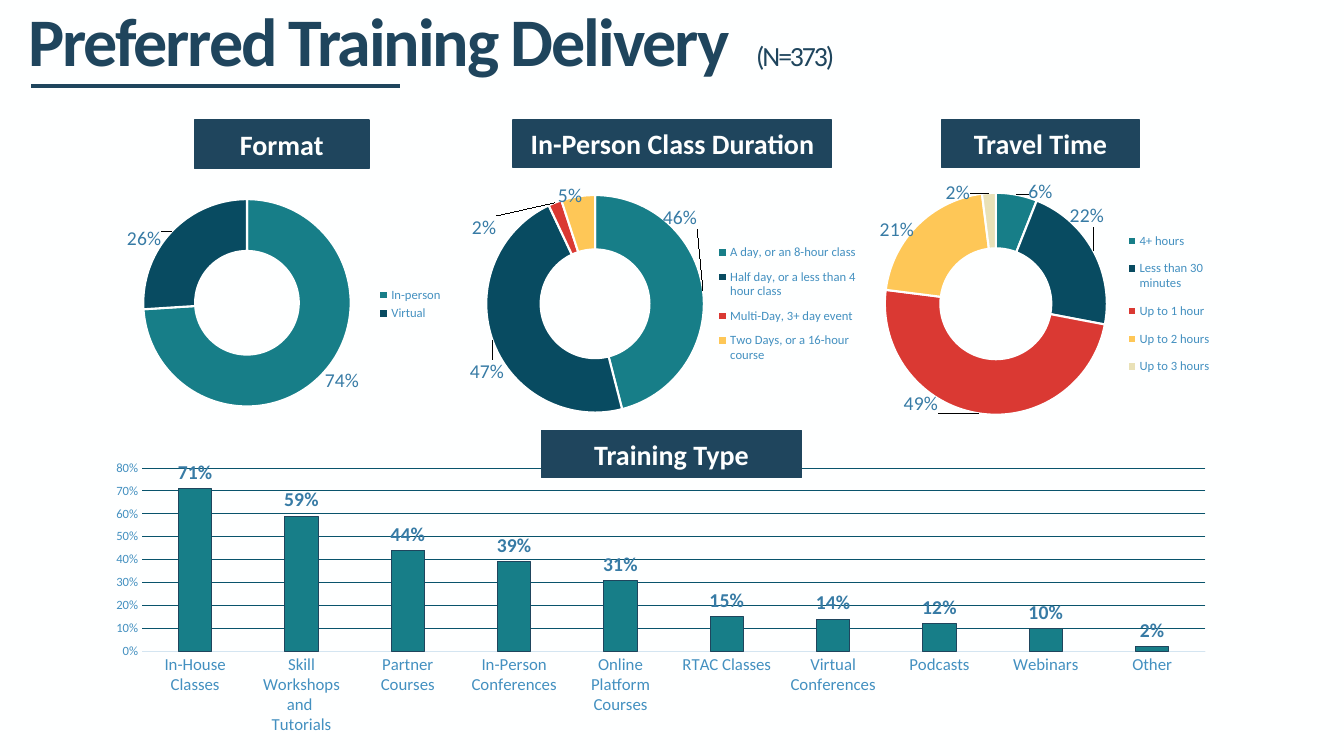
from dataclasses import dataclass

from lxml.etree import SubElement
from pptx import Presentation
from pptx.chart.data import CategoryChartData
from pptx.dml.color import RGBColor
from pptx.enum.chart import XL_CHART_TYPE, XL_LABEL_POSITION, XL_LEGEND_POSITION, XL_TICK_MARK
from pptx.enum.shapes import MSO_CONNECTOR, MSO_SHAPE
from pptx.enum.text import MSO_ANCHOR, PP_ALIGN
from pptx.oxml import parse_xml
from pptx.oxml.ns import nsdecls, qn
from pptx.util import Pt

EMU_PER_PX = 9144


@dataclass(frozen=True)
class Theme:
    font: str = "Calibri"
    navy: str = "1F455D"
    white: str = "FEFFFF"
    label: str = "377BA5"
    axis: str = "4390C0"
    grid: str = "09546C"
    baseline: str = "D4E5F1"
    slices: tuple = ("177E88", "084B61", "DA3933", "FEC757", "E9E1B7")
    title_size: float = 48.6
    sample_size: float = 19.8
    banner_size: int = 20
    value_size: int = 14
    category_size: int = 12
    chart_size: int = 10
    small_size: int = 9


THEME = Theme()


def px(*lengths):
    return [length * EMU_PER_PX for length in lengths]


def rgb(code):
    return RGBColor.from_string(code)


def style_font(font, size, color, bold=False):
    font.name = THEME.font
    font.size = Pt(size)
    font.color.rgb = rgb(color)
    font.bold = bold


def style_line(line, color, width):
    line.color.rgb = rgb(color)
    line.width = Pt(width)


def style_fill(fill, color):
    fill.solid()
    fill.fore_color.rgb = rgb(color)


def set_layout(element, index, values, inner=False):
    for old in element.findall(qn("c:layout")):
        element.remove(old)
    layout = parse_xml(f"<c:layout {nsdecls('c')}><c:manualLayout/></c:layout>")
    settings = []
    if inner:
        settings.append(("layoutTarget", "inner"))
    if len(values) == 4:
        settings += [("xMode", "edge"), ("yMode", "edge")]
    settings += zip("xywh", values)
    for tag, value in settings:
        SubElement(layout[0], qn(f"c:{tag}")).set("val", str(value))
    element.insert(index, layout)


def add_title(slide, heading, sample):
    title = slide.shapes.title
    title.left, title.top, title.width, title.height = px(18, 3, 1304, 82)
    title.text_frame.vertical_anchor = MSO_ANCHOR.MIDDLE
    paragraph = title.text_frame.paragraphs[0]
    paragraph.alignment = PP_ALIGN.LEFT
    paragraph.line_spacing = 0.9
    tabs = SubElement(paragraph._p.get_or_add_pPr(), qn("a:tabLst"))
    tab = SubElement(tabs, qn("a:tab"))
    tab.set("pos", str(px(722)[0]))
    tab.set("algn", "l")
    parts = ((heading + "\t", THEME.title_size, True), (sample, THEME.sample_size, False))
    for text, size, bold in parts:
        run = paragraph.add_run()
        run.text = text
        style_font(run.font, size, THEME.navy, bold)
        run._r.get_or_add_rPr().set("spc", "-150")


def add_rule(slide, left, right, y):
    rule = slide.shapes.add_connector(MSO_CONNECTOR.STRAIGHT, *px(left, y, right, y))
    style_line(rule.line, THEME.navy, 3)
    SubElement(rule._element.spPr, qn("a:effectLst"))


def add_banner(slide, text, box):
    banner = slide.shapes.add_shape(MSO_SHAPE.RECTANGLE, *px(*box))
    banner.shadow.inherit = False
    style_fill(banner.fill, THEME.navy)
    style_line(banner.line, THEME.navy, 1)
    frame = banner.text_frame
    frame.word_wrap = True
    frame.vertical_anchor = MSO_ANCHOR.MIDDLE
    paragraph = frame.paragraphs[0]
    paragraph.text = text
    paragraph.alignment = PP_ALIGN.CENTER
    style_font(paragraph.font, THEME.banner_size, THEME.white, True)


def add_chart(slide, kind, box, shares, plot_area):
    data = CategoryChartData(number_format="0%")
    data.categories = list(shares)
    data.add_series("Series 1", list(shares.values()))
    chart = slide.shapes.add_chart(kind, *px(*box), data).chart
    chart.has_title = False
    style_font(chart.font, THEME.chart_size, THEME.navy)
    set_layout(chart._chartSpace.chart.plotArea, 0, plot_area, inner=True)
    return chart


def style_labels(labels, bold=False):
    labels.show_value = True
    labels.number_format = "0%"
    labels.number_format_is_linked = False
    style_font(labels.font, THEME.value_size, THEME.label, bold)


def add_doughnut(slide, box, shares, plot_area, legend_area, label_shifts):
    chart = add_chart(slide, XL_CHART_TYPE.DOUGHNUT, box, shares, plot_area)
    chart.has_legend = True
    legend = chart.legend
    legend.position = XL_LEGEND_POSITION.RIGHT
    legend.include_in_layout = False
    style_font(legend.font, THEME.small_size, THEME.axis)
    set_layout(legend._element, 1, legend_area)
    plot = chart.plots[0]
    plot.vary_by_categories = True
    plot._element.find(qn("c:holeSize")).set("val", "75")
    series = plot.series[0]
    style_labels(series.data_labels)
    for index, color in enumerate(THEME.slices[:len(shares)]):
        point = series.points[index]
        style_fill(point.format.fill, color)
        style_line(point.format.line, THEME.white, 1.5)
        style_font(point.data_label.font, THEME.value_size, THEME.label)
    for label, shift in zip(series._element.iter(qn("c:dLbl")), label_shifts):
        set_layout(label, 1, shift)


def add_columns(slide, box, shares, plot_area):
    chart = add_chart(slide, XL_CHART_TYPE.COLUMN_CLUSTERED, box, shares, plot_area)
    chart.has_legend = False
    plot = chart.plots[0]
    plot.vary_by_categories = False
    plot.gap_width = 219
    plot.overlap = -27
    series = plot.series[0]
    style_fill(series.format.fill, THEME.slices[0])
    style_line(series.format.line, THEME.navy, 0.75)
    style_labels(series.data_labels, True)
    series.data_labels.position = XL_LABEL_POSITION.OUTSIDE_END
    sizes = (THEME.category_size, THEME.small_size)
    for axis, size in zip((chart.category_axis, chart.value_axis), sizes):
        axis.major_tick_mark = axis.minor_tick_mark = XL_TICK_MARK.NONE
        style_font(axis.tick_labels.font, size, THEME.axis)
    style_line(chart.category_axis.format.line, THEME.baseline, 0.75)
    percent = chart.value_axis
    percent.minimum_scale, percent.maximum_scale, percent.major_unit = 0, 0.8, 0.1
    percent.tick_labels.number_format = "0%"
    percent.tick_labels.number_format_is_linked = False
    percent.format.line.fill.background()
    style_line(percent.major_gridlines.format.line, THEME.grid, 0.75)


def main():
    deck = Presentation()
    deck.slide_width, deck.slide_height = px(1333, 750)
    slide = deck.slides.add_slide(deck.slide_layouts[5])
    style_fill(slide.background.fill, THEME.white)
    add_title(slide, "Preferred Training Delivery", "(N=373)")
    add_rule(slide, 31, 397, 85)

    add_doughnut(slide, (85, 165, 381, 271), {"In-person": 0.74, "Virtual": 0.26},
                 (0.15, 0.12, 0.54, 0.76), (0.75, 0.43, 0.19, 0.15),
                 [(0.1, 0.09), (-0.12, -0.04)])
    add_banner(slide, "Format", (193, 119, 173, 48))

    durations = {"A day, or an 8-hour class": 0.46, "Half day, or a less than 4 hour class": 0.47,
                 "Multi-Day, 3+ day event": 0.02, "Two Days, or a 16-hour course": 0.05}
    add_doughnut(slide, (466, 176, 401, 251), durations,
                 (0.04, 0.07, 0.54, 0.86), (0.6, 0.23, 0.37, 0.54),
                 [(0.01, -0.3), (-0.08, 0.16), (-0.2, 0), (-0.03, -0.11)])
    add_banner(slide, "In-Person Class Duration", (509, 119, 316, 47))

    travel_times = {"4+ hours": 0.06, "Less than 30 minutes": 0.22, "Up to 1 hour": 0.49,
                    "Up to 2 hours": 0.21, "Up to 3 hours": 0.02}
    add_doughnut(slide, (856, 176, 361, 251), travel_times,
                 (0.06, 0.06, 0.61, 0.88), (0.71, 0.17, 0.26, 0.66),
                 [(0.08, -0.12), (0.05, -0.19), (-0.17, 0.07), (-0.11, -0.06), (-0.09, -0.11)])
    add_banner(slide, "Travel Time", (934, 119, 196, 47))

    training_types = {
        "In-House Classes": 0.71, "Skill Workshops and \nTutorials": 0.59, "Partner Courses": 0.44,
        "In-Person Conferences": 0.39, "Online Platform Courses": 0.31, "RTAC Classes": 0.15,
        "Virtual Conferences": 0.14, "Podcasts": 0.12, "Webinars": 0.1, "Other": 0.02,
    }
    add_columns(slide, (96, 453, 1122, 284), training_types, (0.04, 0.04, 0.94, 0.64))
    add_banner(slide, "Training Type", (537, 427, 258, 47))
    deck.save("out.pptx")


if __name__ == "__main__":
    main()
